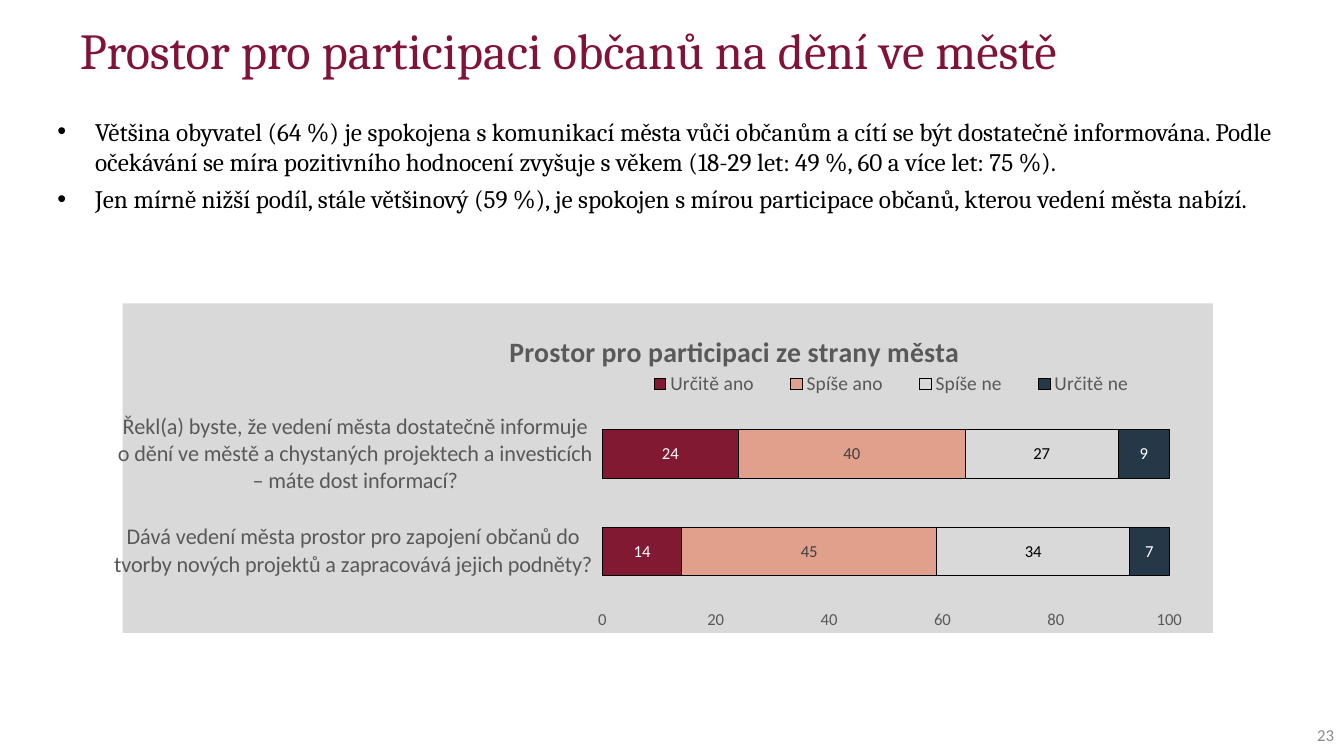
from dataclasses import dataclass

from lxml.etree import SubElement
from pptx import Presentation
from pptx.chart.chart import Chart
from pptx.chart.data import CategoryChartData
from pptx.dml.color import RGBColor
from pptx.enum.chart import XL_CHART_TYPE as ChartType
from pptx.enum.chart import XL_LABEL_POSITION as LabelPosition
from pptx.enum.chart import XL_LEGEND_POSITION as LegendPosition
from pptx.enum.chart import XL_TICK_MARK as TickMark
from pptx.enum.text import MSO_ANCHOR as Anchor
from pptx.enum.text import PP_ALIGN as Align
from pptx.oxml import parse_xml
from pptx.oxml.ns import nsdecls, qn
from pptx.slide import Slide
from pptx.text.text import Font, TextFrame, _Paragraph as Paragraph
from pptx.util import Pt

BLACK = RGBColor(0x00, 0x00, 0x00)
WHITE = RGBColor(0xFF, 0xFF, 0xFF)
TITLE_RED = RGBColor(0x81, 0x13, 0x39)
BAR_RED = RGBColor(0x82, 0x19, 0x32)
SALMON = RGBColor(0xE1, 0xA0, 0x8C)
LIGHT_GRAY = RGBColor(0xD9, 0xD9, 0xD9)
NAVY = RGBColor(0x25, 0x38, 0x48)
TEXT_GRAY = RGBColor(0x59, 0x59, 0x59)
DARK_GRAY = RGBColor(0x40, 0x40, 0x40)
PAGE_GRAY = RGBColor(0x8C, 0x8C, 0x8C)
SERIF = "Cambria"
SANS = "Calibri"


@dataclass(frozen=True)
class Box:
    left: float
    top: float
    width: float
    height: float


@dataclass(frozen=True)
class Answer:
    name: str
    shares: tuple[int, int]
    fill: RGBColor
    label_color: RGBColor


HEADING = "Prostor pro participaci občanů na dění ve městě"
FINDINGS = (
    "Většina obyvatel (64 %) je spokojena s komunikací města vůči občanům a cítí se být "
    "dostatečně informována. Podle očekávání se míra pozitivního hodnocení zvyšuje s věkem "
    "(18-29 let: 49 %, 60 a více let: 75 %).",
    "Jen mírně nižší podíl, stále většinový (59 %), je spokojen s mírou participace občanů, "
    "kterou vedení města nabízí.",
)
QUESTIONS = (
    "Dává vedení města prostor pro zapojení občanů do tvorby nových projektů "
    "a zapracovává jejich podněty?",
    "Řekl(a) byste, že vedení města dostatečně informuje o dění ve městě a chystaných "
    "projektech a investicích – máte dost informací?",
)
ANSWERS = (
    Answer("Určitě ano", (14, 24), BAR_RED, WHITE),
    Answer("Spíše ano", (45, 40), SALMON, DARK_GRAY),
    Answer("Spíše ne", (34, 27), LIGHT_GRAY, BLACK),
    Answer("Určitě ne", (7, 9), NAVY, WHITE),
)


def style_font(font: Font, name: str, size: float, color: RGBColor, bold: bool = False) -> None:
    font.name = name
    font.size = Pt(size)
    font.bold = bold
    font.color.rgb = color


def add_run(paragraph: Paragraph, text: str, name: str, size: float, color: RGBColor,
            bold: bool = False) -> None:
    run = paragraph.add_run()
    run.text = text
    style_font(run.font, name, size, color, bold)


def add_text_frame(slide: Slide, box: Box, margin: float) -> TextFrame:
    frame = slide.shapes.add_textbox(
        Pt(box.left), Pt(box.top), Pt(box.width), Pt(box.height)).text_frame
    frame.word_wrap = True
    frame.margin_left = frame.margin_right = Pt(margin)
    frame.margin_top = frame.margin_bottom = Pt(margin / 2)
    return frame


def add_heading(slide: Slide) -> None:
    heading = add_text_frame(slide, Box(57, 18.7, 847, 77), 0).paragraphs[0]
    heading.line_spacing = 0.9
    add_run(heading, HEADING, SERIF, 36, TITLE_RED)


def add_findings(slide: Slide) -> None:
    frame = add_text_frame(slide, Box(20, 82.8, 916, 149), 0)
    for index, text in enumerate(FINDINGS):
        finding = frame.add_paragraph() if index else frame.paragraphs[0]
        properties = finding._p.get_or_add_pPr()
        properties.set("marL", str(Pt(48)))
        properties.set("indent", str(-Pt(27)))
        SubElement(properties, qn("a:buFont"), typeface="Arial")
        SubElement(properties, qn("a:buChar"), char="•")
        if index:
            finding.space_before = Pt(5)
        add_run(finding, text, SERIF, 18, BLACK)


def add_page_number(slide: Slide) -> None:
    frame = add_text_frame(slide, Box(918, 510.5, 42, 29), 7.2)
    frame.vertical_anchor = Anchor.MIDDLE
    number = frame.paragraphs[0]
    number.alignment = Align.RIGHT
    add_run(number, "23", SANS, 12, PAGE_GRAY)


def place_part(chart: Chart, part_name: str, after: str, x: float, y: float,
               size: tuple[float, float] | None = None, inner: bool = False) -> None:
    part = next(chart.element.iter(qn(part_name)))
    for old_layout in part.findall(qn("c:layout")):
        part.remove(old_layout)
    target = '<c:layoutTarget val="inner"/>' if inner else ""
    extent = f'<c:w val="{size[0]}"/><c:h val="{size[1]}"/>' if size else ""
    layout = parse_xml(
        f'<c:layout {nsdecls("c")}><c:manualLayout>{target}'
        f'<c:xMode val="edge"/><c:yMode val="edge"/><c:x val="{x}"/><c:y val="{y}"/>'
        f'{extent}</c:manualLayout></c:layout>')
    if after:
        part.find(qn(after)).addnext(layout)
    else:
        part.insert(0, layout)


def style_axes(chart: Chart) -> None:
    questions, shares = chart.category_axis, chart.value_axis
    for axis, size in ((questions, 16), (shares, 12)):
        axis.major_tick_mark = TickMark.OUTSIDE
        axis.minor_tick_mark = TickMark.NONE
        style_font(axis.tick_labels.font, SANS, size, TEXT_GRAY)
    questions.has_major_gridlines = False
    shares.has_major_gridlines = True
    for line in (questions.format.line, shares.major_gridlines.format.line):
        line.color.rgb = LIGHT_GRAY
        line.width = Pt(0.75)
    shares.format.line.fill.background()
    shares.minimum_scale = 0
    shares.maximum_scale = 100
    shares.major_unit = 20


def style_answers(chart: Chart) -> None:
    bars = chart.plots[0]
    bars.gap_width = 100
    bars.overlap = 100
    bars.vary_by_categories = False
    for series, answer in zip(bars.series, ANSWERS):
        series.format.fill.solid()
        series.format.fill.fore_color.rgb = answer.fill
        series.format.line.color.rgb = BLACK
        series.format.line.width = Pt(0.5)
        labels = series.data_labels
        labels.show_value = True
        labels.position = LabelPosition.CENTER
        style_font(labels.font, SANS, 12, answer.label_color)


def add_survey_chart(slide: Slide, box: Box) -> None:
    survey = CategoryChartData(number_format="0")
    survey.categories = QUESTIONS
    for answer in ANSWERS:
        survey.add_series(answer.name, answer.shares)
    chart = slide.shapes.add_chart(
        ChartType.BAR_STACKED, Pt(box.left), Pt(box.top), Pt(box.width), Pt(box.height),
        survey).chart
    style_font(chart.font, SANS, 10, BLACK)
    chart.element.find(qn("c:chart")).addnext(parse_xml(
        f'<c:spPr {nsdecls("c", "a")}><a:solidFill><a:srgbClr val="{LIGHT_GRAY}"/>'
        '</a:solidFill><a:ln><a:noFill/></a:ln></c:spPr>'))
    chart.has_title = True
    add_run(chart.chart_title.text_frame.paragraphs[0], "Prostor pro participaci ze strany města",
            SANS, 20, TEXT_GRAY, bold=True)
    chart.has_legend = True
    chart.legend.position = LegendPosition.BOTTOM
    chart.legend.include_in_layout = False
    style_font(chart.legend.font, SANS, 14, TEXT_GRAY)
    style_axes(chart)
    style_answers(chart)
    place_part(chart, "c:title", "c:tx", 0.35, 0.07)
    place_part(chart, "c:legend", "c:legendPos", 0.46, 0.2, (0.49, 0.09))
    place_part(chart, "c:plotArea", "", 0.44, 0.31, (0.52, 0.59), inner=True)


def main() -> None:
    deck = Presentation()
    deck.slide_width, deck.slide_height = Pt(960), Pt(540)
    slide = deck.slides.add_slide(deck.slide_layouts[6])
    add_heading(slide)
    add_findings(slide)
    add_page_number(slide)
    add_survey_chart(slide, Box(81.4, 216.7, 785, 235.4))
    deck.save("out.pptx")


if __name__ == "__main__":
    main()
